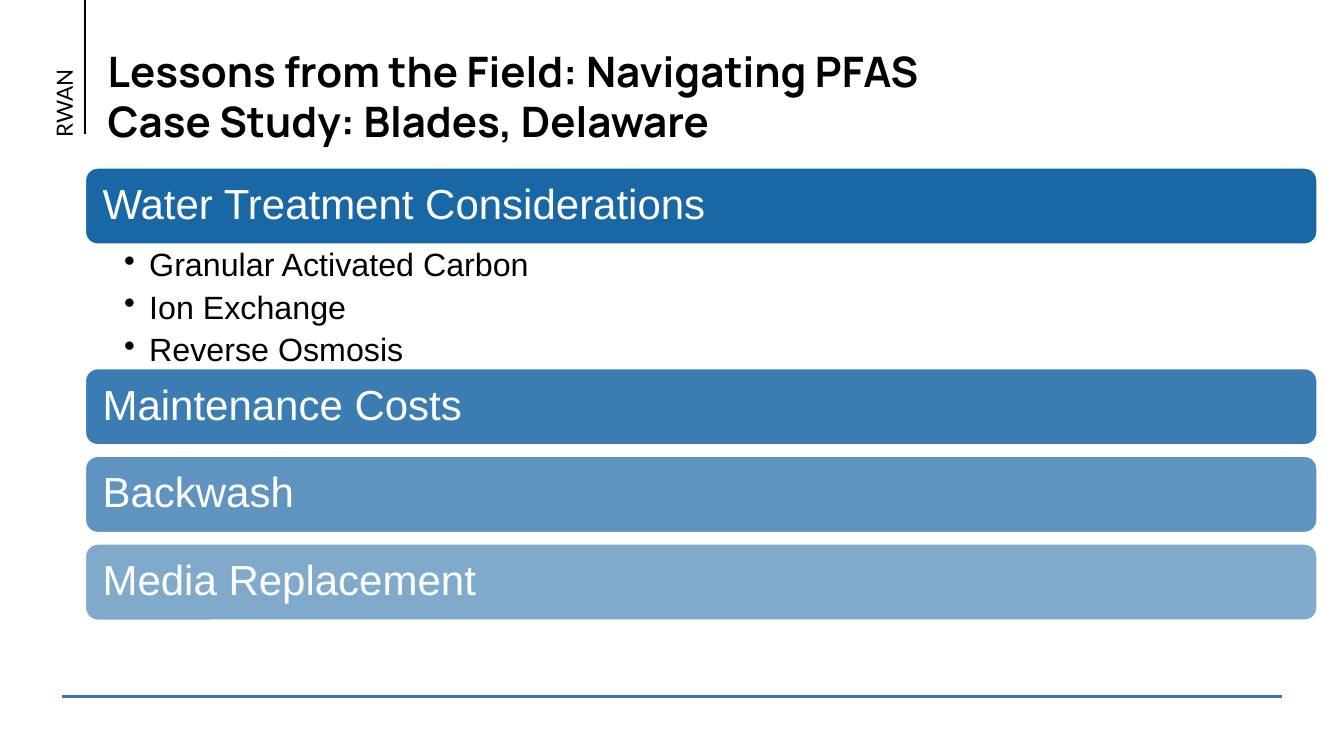
import pptx
import pptx.dml.color
import pptx.enum.shapes
import pptx.enum.text
import pptx.oxml
import pptx.oxml.ns
import pptx.util

PX = 9144  # EMU per px, 100 px to the inch
COLORS = {"black": "000000", "white": "FFFFFF", "bar": "01579B", "rule": "3776B3"}
ANCHOR = pptx.enum.text.MSO_ANCHOR

TITLE = "Lessons from the Field: Navigating PFAS\vCase Study: Blades, Delaware"
TOPICS = [
    ("Water Treatment Considerations", 90,
     ["Granular Activated Carbon", "Ion Exchange", "Reverse Osmosis"]),
    ("Maintenance Costs", 77, []),
    ("Backwash", 63, []),
    ("Media Replacement", 50, []),
]
BAR_LEFT, BAR_WIDTH, BAR_HEIGHT = 84, 1223, 77
FIRST_BAR_TOP, BAR_GAP, LIST_HEIGHT = 166, 10, 122

TITLE_FONT = {"name": "Manrope", "size": pptx.util.Pt(30), "bold": True}
LABEL_FONT = {"name": "Lato", "size": pptx.util.Pt(16)}
BAR_FONT = {"name": "Arial", "size": pptx.util.Pt(30)}
LIST_FONT = {"name": "Arial", "size": pptx.util.Pt(23)}


def rgb(name):
    return pptx.dml.color.RGBColor.from_string(COLORS[name])


def px(*lengths):
    return [pptx.util.Emu(n * PX) for n in lengths]


def add_xml(parent, tag, **attributes):
    child = pptx.oxml.parse_xml(f"<a:{tag} {pptx.oxml.ns.nsdecls('a')}/>")
    for key, value in attributes.items():
        child.set(key, str(value))
    parent.append(child)


def set_frame(tf, insets, anchor=ANCHOR.TOP):
    """Wrap the text and set insets in the order left, top, right, bottom."""
    tf.word_wrap = True
    tf.vertical_anchor = anchor
    for side, inset in zip(("left", "top", "right", "bottom"), px(*insets)):
        setattr(tf, f"margin_{side}", inset)


def format_paragraph(p, font, color, **spacing):
    p.alignment = pptx.enum.text.PP_ALIGN.LEFT
    for key, value in spacing.items():
        setattr(p, key, value)
    for r in p.runs:
        for key, value in font.items():
            setattr(r.font, key, value)
        r.font.color.rgb = rgb(color)


def add_text(slide, box, text, font, insets):
    sp = slide.shapes.add_textbox(*px(*box))
    set_frame(sp.text_frame, insets)
    p = sp.text_frame.paragraphs[0]
    p.text = text
    format_paragraph(p, font, "black")
    return sp


def add_line(slide, ends, color):
    line = slide.shapes.add_connector(
        pptx.enum.shapes.MSO_CONNECTOR.STRAIGHT, *px(*ends))
    line.line.color.rgb = rgb(color)
    line.line.width = pptx.util.Pt(1.5)
    add_xml(line._element.spPr, "effectLst")


def add_bar(slide, top, text, opacity):
    sp = slide.shapes.add_shape(
        pptx.enum.shapes.MSO_SHAPE.ROUNDED_RECTANGLE,
        *px(BAR_LEFT, top, BAR_WIDTH, BAR_HEIGHT))
    sp.shadow.inherit = False
    sp.fill.solid()
    sp.fill.fore_color.rgb = rgb("bar")
    fill_color = sp._element.spPr.find(".//" + pptx.oxml.ns.qn("a:srgbClr"))
    add_xml(fill_color, "alpha", val=opacity * 1000)
    sp.line.color.rgb = rgb("white")
    sp.line.width = pptx.util.Pt(2)
    set_frame(sp.text_frame, (14, 12, 14, 12), ANCHOR.MIDDLE)
    p = sp.text_frame.paragraphs[0]
    p.text = text
    format_paragraph(p, BAR_FONT, "white", line_spacing=0.9)


def add_bullets(slide, top, items):
    sp = slide.shapes.add_textbox(*px(BAR_LEFT, top, BAR_WIDTH, LIST_HEIGHT))
    tf = sp.text_frame
    set_frame(tf, (39, 4, 23, 4))
    for i, item in enumerate(items):
        p = tf.paragraphs[0] if i == 0 else tf.add_paragraph()
        p.text = item
        pPr = p._p.get_or_add_pPr()
        pPr.set("marL", str(25 * PX))
        pPr.set("indent", str(-25 * PX))
        add_xml(pPr, "buChar", char="•")
        format_paragraph(p, LIST_FONT, "black", line_spacing=0.9,
                         space_after=pptx.util.Pt(5.5))


def main():
    prs = pptx.Presentation()
    prs.slide_width, prs.slide_height = px(1333, 750)
    slide = prs.slides.add_slide(prs.slide_layouts[6])

    add_line(slide, (62, 691, 1272, 691), "rule")
    add_line(slide, (84, 0, 84, 133), "black")
    label = add_text(slide, (4, 62, 120, 54), "RWAN", LABEL_FONT, (13, 13, 13, 13))
    label.rotation = 270

    top = FIRST_BAR_TOP
    for text, opacity, items in TOPICS:
        add_bar(slide, top, text, opacity)
        top += BAR_HEIGHT
        if items:
            add_bullets(slide, top, items)
        top += LIST_HEIGHT if items else BAR_GAP

    add_text(slide, (97, 35, 922, 93), TITLE, TITLE_FONT, (10, 10, 10, 10))
    prs.save("out.pptx")


if __name__ == "__main__":
    main()
